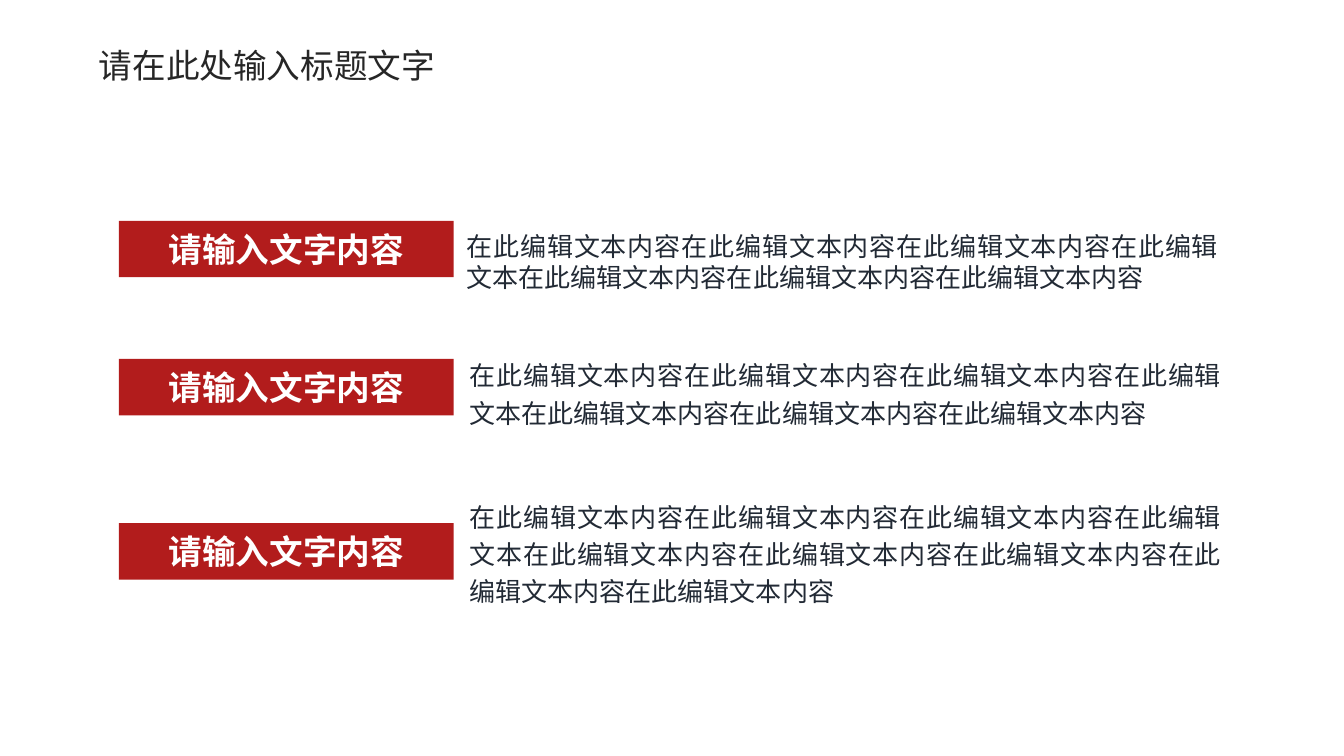
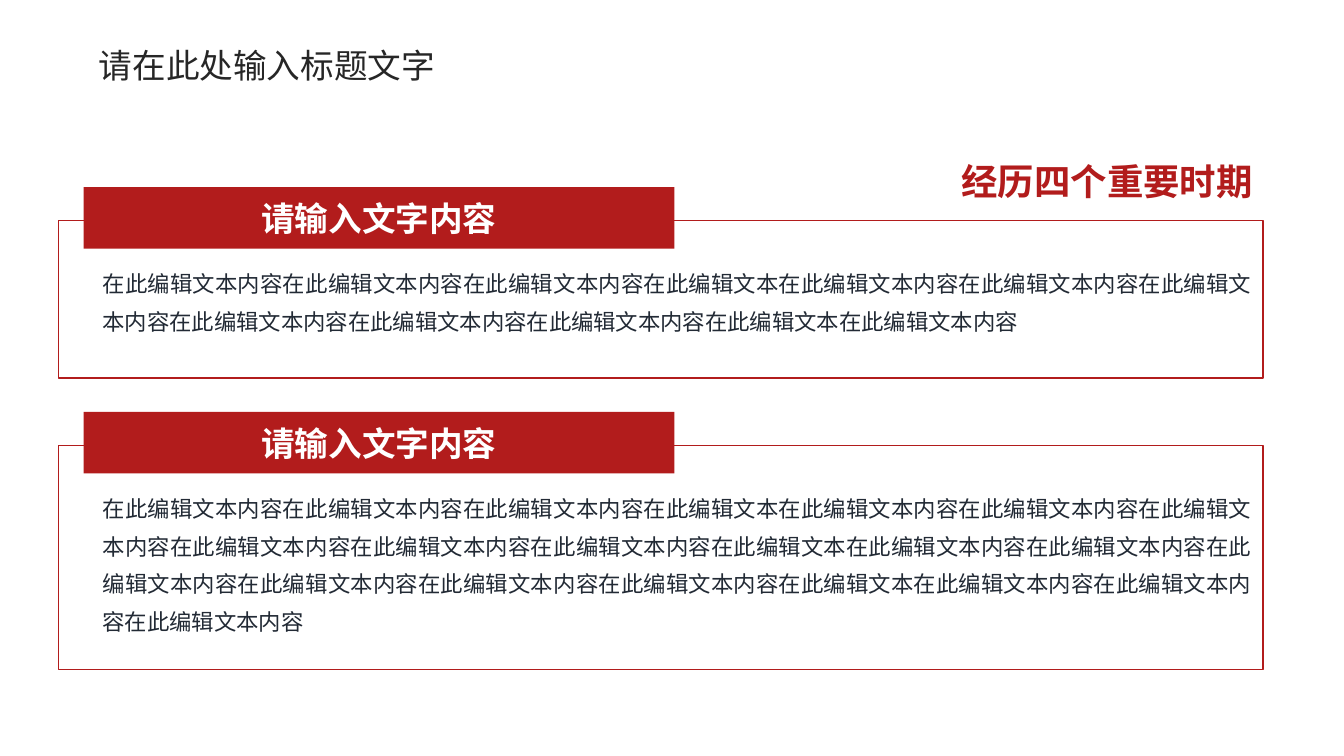
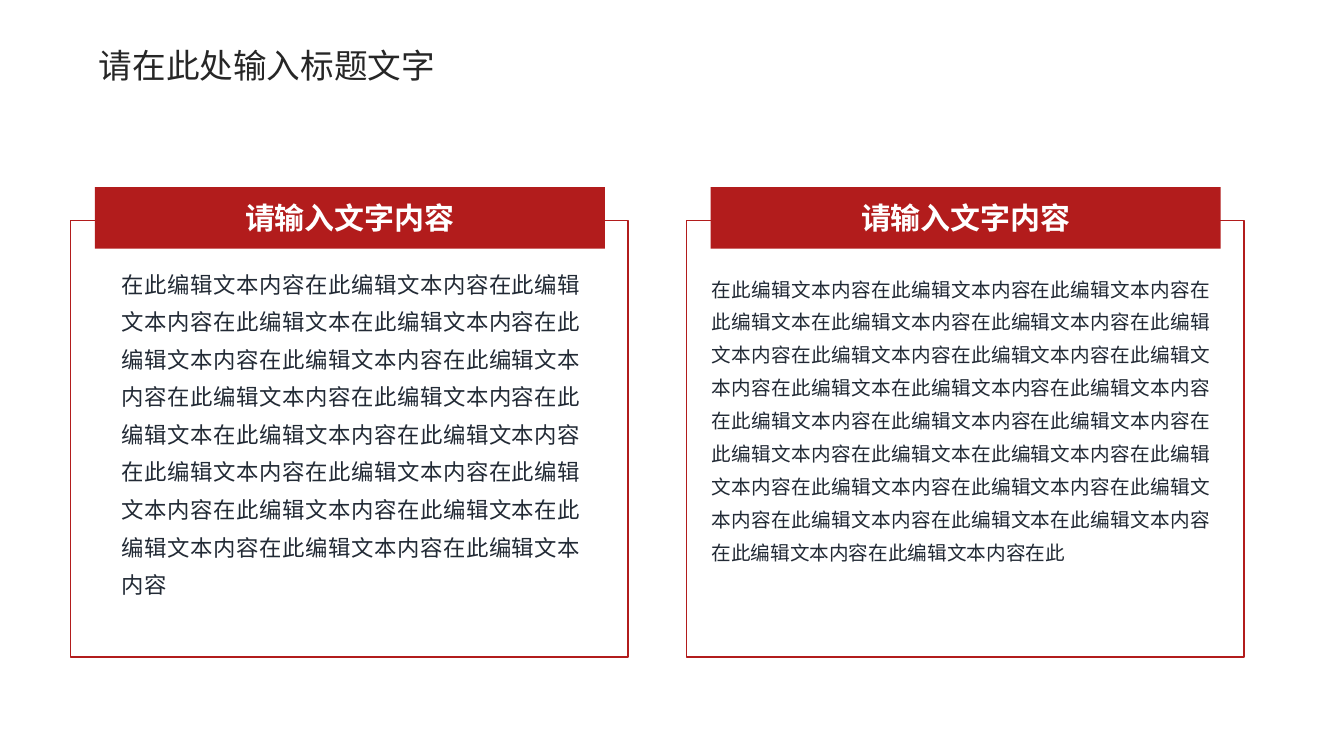
from dataclasses import dataclass
from typing import NamedTuple

from lxml import etree
from pptx import Presentation
from pptx import util as u
from pptx.dml.color import RGBColor
from pptx.enum import lang, shapes, text
from pptx.oxml.ns import qn


@dataclass(frozen=True)
class Theme:
    font: str = "Noto Sans CJK SC"
    red: str = "B21C1C"
    white: str = "FFFFFF"
    ink: str = "222A35"
    title_ink: str = "262626"
    title: float = 24
    label: float = 24
    small_label: float = 21.4
    callout: float = 26
    large_body: float = 18.6
    body: float = 16
    small_body: float = 14


class Area(NamedTuple):
    left: float
    top: float
    width: float
    height: float


THEME = Theme()
SLIDE_WIDTH, SLIDE_HEIGHT = u.Inches(13.33), u.Inches(7.5)
TITLE_AREA = Area(6.6, 5.33, 32.25, 6.67)
TITLE = "请在此处输入标题文字"
LABEL = "请输入文字内容"
PHRASE = "在此编辑文本内容"
SHORT_PHRASE = "在此编辑文本"


def prose(*phrase_counts):
    return SHORT_PHRASE.join(PHRASE * count for count in phrase_counts)


def place(area):
    return (
        round(SLIDE_WIDTH * area.left / 100),
        round(SLIDE_HEIGHT * area.top / 100),
        round(SLIDE_WIDTH * area.width / 100),
        round(SLIDE_HEIGHT * area.height / 100),
    )


def write(frame, words, size, color, bold=False, align=text.PP_ALIGN.LEFT,
          spacing=1.0, anchor=text.MSO_ANCHOR.TOP, wrap=True):
    frame.text = words
    frame.word_wrap = wrap
    frame.auto_size = text.MSO_AUTO_SIZE.NONE
    frame.vertical_anchor = anchor
    paragraph = frame.paragraphs[0]
    paragraph.alignment = align
    paragraph.line_spacing = spacing
    run = paragraph.runs[0]
    run.font.size = u.Pt(size)
    run.font.bold = bold
    run.font.name = THEME.font
    run.font.language_id = lang.MSO_LANGUAGE_ID.SIMPLIFIED_CHINESE
    run.font.color.rgb = RGBColor.from_string(color)
    east_asian = etree.SubElement(run.font._element, qn("a:ea"))
    east_asian.set("typeface", THEME.font)


def add_titled_slide(deck, layout):
    slide = deck.slides.add_slide(layout)
    write(slide.shapes.title.text_frame, TITLE, THEME.title, THEME.title_ink,
          anchor=text.MSO_ANCHOR.MIDDLE)
    return slide


def add_rectangle(slide, area):
    rectangle = slide.shapes.add_shape(
        shapes.MSO_SHAPE.RECTANGLE, *place(area))
    rectangle.shadow.inherit = False
    return rectangle


def add_label(slide, area, size=THEME.label):
    label = add_rectangle(slide, area)
    label.fill.solid()
    label.fill.fore_color.rgb = RGBColor.from_string(THEME.red)
    label.line.fill.background()
    write(label.text_frame, LABEL, size, THEME.white, bold=True,
          align=text.PP_ALIGN.CENTER, anchor=text.MSO_ANCHOR.MIDDLE)


def add_outline(slide, area):
    outline = add_rectangle(slide, area)
    outline.fill.background()
    outline.line.color.rgb = RGBColor.from_string(THEME.red)
    outline.line.width = u.Pt(1)


def add_body(slide, area, words, size, spacing):
    body = slide.shapes.add_textbox(*place(area))
    write(body.text_frame, words, size, THEME.ink,
          align=text.PP_ALIGN.JUSTIFY, spacing=spacing)


def add_panel(slide, area, label_inset, label_width, label_size,
              body_area, words, body_size):
    add_outline(slide, area)
    add_label(slide, Area(area.left + label_inset, area.top - 4.45,
                          label_width, 8.13), label_size)
    add_body(slide, body_area, words, body_size, 1.4)


def build_label_rows(slide):
    rows = [
        (29.2, Area(33.98, 29.87, 57.45, 9.73), 1.0, prose(3, 3)),
        (47.47, Area(34.2, 46.13, 57.45, 11.33), 1.2, prose(3, 3)),
        (69.2, Area(34.2, 64.8, 57.45, 16.4), 1.2, prose(3, 5)),
    ]
    for label_top, body_area, spacing, words in rows:
        add_body(slide, body_area, words, THEME.large_body, spacing)
        add_label(slide, Area(8.85, label_top, 24.9, 7.47))


def build_stacked_panels(slide):
    panels = [
        (29.2, 20.8, 11.33, prose(3, 6, 1)),
        (58.93, 29.6, 26.4, prose(3, 6, 6, 3)),
    ]
    for top, height, body_height, words in panels:
        add_panel(slide, Area(4.35, top, 89.63, height), 1.87, 43.95,
                  THEME.label, Area(6.9, top + 4.5, 87.08, body_height),
                  words, THEME.body)
    callout = slide.shapes.add_textbox(*place(Area(70.8, 20.4, 24, 7.2)))
    write(callout.text_frame, "经历四个重要时期", THEME.callout, THEME.red,
          bold=True, wrap=False)


def build_side_panels(slide):
    panels = [
        (5.25, Area(8.33, 33.73, 35.63, 46.53),
         prose(3, 6, 6, 3), THEME.body),
        (51.08, Area(52.2, 34.8, 38.63, 40.93),
         prose(3, 6, 6, 6, 3) + "在此", THEME.small_body),
    ]
    for left, body_area, words, body_size in panels:
        add_panel(slide, Area(left, 29.2, 41.48, 57.73), 1.8, 37.95,
                  THEME.small_label, body_area, words, body_size)


def main():
    deck = Presentation()
    deck.slide_width, deck.slide_height = SLIDE_WIDTH, SLIDE_HEIGHT
    layout = deck.slide_layouts.get_by_name("Title Only")
    title = layout.placeholders[0]
    title.left, title.top, title.width, title.height = place(TITLE_AREA)
    for build in (build_label_rows, build_stacked_panels, build_side_panels):
        build(add_titled_slide(deck, layout))
    deck.save("out.pptx")


if __name__ == "__main__":
    main()
